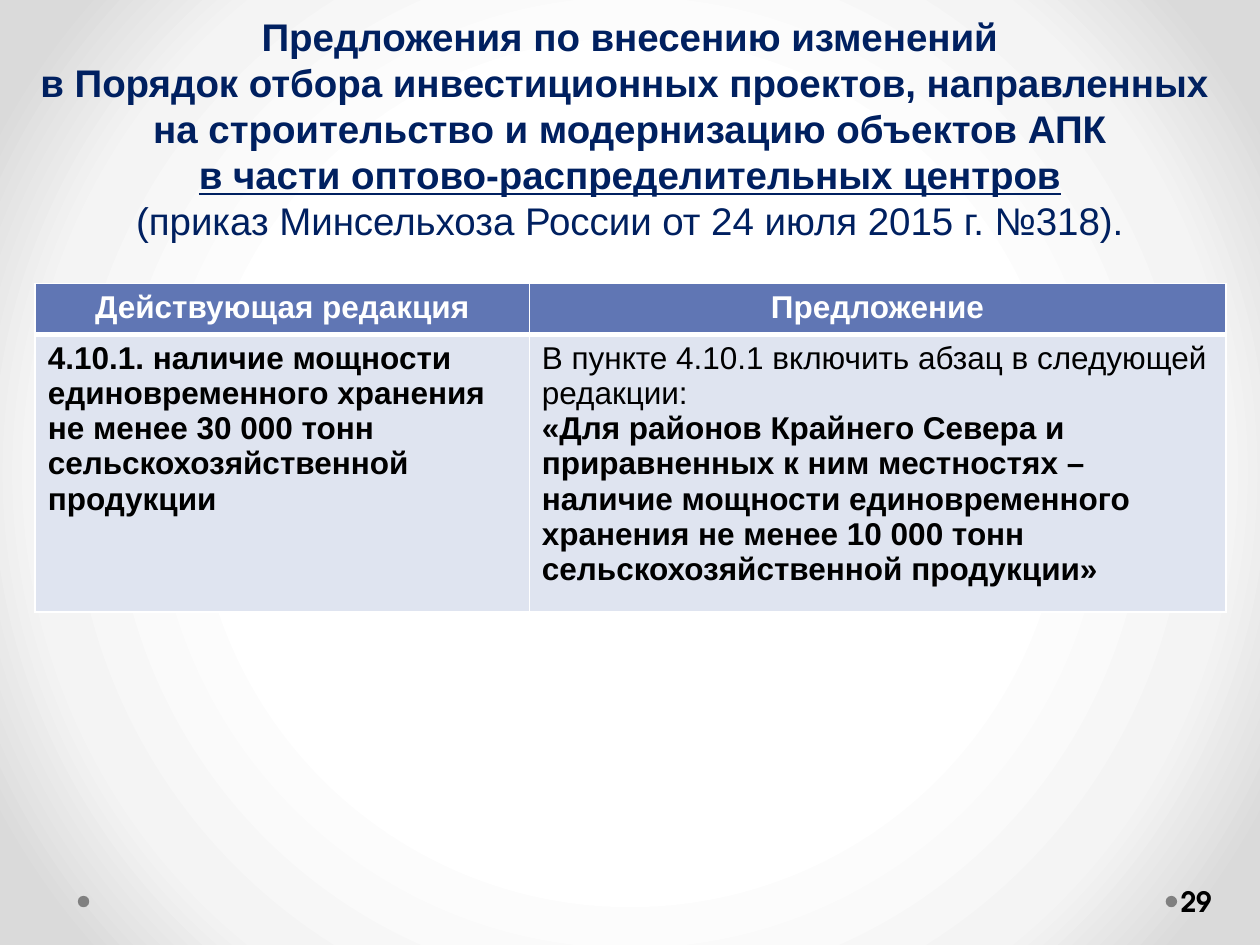
from pptx import Presentation
from pptx.dml.color import RGBColor
from pptx.enum.shapes import MSO_SHAPE
from pptx.enum.text import MSO_ANCHOR, PP_ALIGN
from pptx.oxml import parse_xml
from pptx.oxml.ns import nsdecls
from pptx.util import Cm, Pt

OVAL = MSO_SHAPE.OVAL
MIDDLE = MSO_ANCHOR.MIDDLE
LEFT, CENTER = PP_ALIGN.LEFT, PP_ALIGN.CENTER

COLORS = {
    "white": "FFFFFF", "pale": "F4F4F4", "edge": "DADADA", "dot": "808080",
    "navy": "002060", "head": "6076B4", "body": "DFE4F0", "black": "000000",
}


def color(name):
    return RGBColor.from_string(COLORS[name])


def write(frame, lines, size, tint, align, face="Arial"):
    """Fill a text frame with one paragraph per (text, bold, underline)."""
    for i, (text, bold, under) in enumerate(lines):
        para = frame.paragraphs[0] if i == 0 else frame.add_paragraph()
        para.alignment = align
        run = para.add_run()
        run.text = text
        font = run.font
        font.name, font.size = face, Pt(size)
        font.bold, font.underline = bold, under
        font.color.rgb = color(tint)


deck = Presentation()
deck.slide_width, deck.slide_height = Cm(25.4), Cm(19.05)
slide = deck.slides.add_slide(deck.slide_layouts[6])
shapes = slide.shapes

# Background: radial gradient
stops = "".join(
    f'<a:gs pos="{pos * 1000}"><a:srgbClr val="{COLORS[name]}"/></a:gs>'
    for pos, name in ((50, "white"), (76, "pale"), (92, "edge")))
slide.element.cSld.insert(0, parse_xml(
    f'<p:bg {nsdecls("p", "a")}><p:bgPr><a:gradFill rotWithShape="1">'
    f'<a:gsLst>{stops}</a:gsLst><a:path path="circle">'
    '<a:fillToRect l="50000" t="50000" r="50000" b="50000"/></a:path>'
    '</a:gradFill><a:effectLst/></p:bgPr></p:bg>'))

# Footer dots and page number
for left in (23.5, 1.57):
    dot = shapes.add_shape(OVAL, Cm(left), Cm(18.06), Cm(0.23), Cm(0.23))
    dot.shadow.inherit = False
    dot.fill.solid()
    dot.fill.fore_color.rgb = color("dot")
    dot.line.fill.background()

page = shapes.add_textbox(Cm(23.72), Cm(17.65), Cm(1.55), Cm(1.02)).text_frame
page.word_wrap = True
page.vertical_anchor = MIDDLE
page.margin_left, page.margin_right = Cm(0.08), Cm(0.13)
write(page, [("29", True, False)], 16, "black", LEFT, "TeX Gyre Adventor")

# Title
title = shapes.add_textbox(0, Cm(0.13), Cm(25.4), Cm(4.95)).text_frame
title.word_wrap = True
write(title, [
    ("Предложения по внесению изменений", True, False),
    ("в Порядок отбора инвестиционных проектов, направленных ", True, False),
    ("на строительство и модернизацию объектов АПК", True, False),
    ("в части оптово-распределительных центров", True, True),
    ("(приказ Минсельхоза России от 24 июля 2015 г. №318).", False, False),
], 22, "navy", CENTER)

# Table of current and proposed wording
rows = [
    [[("Действующая редакция", True, False)],
     [("Предложение", True, False)]],
    [[("4.10.1. наличие мощности единовременного хранения не менее "
       "30 000 тонн сельскохозяйственной продукции", True, False)],
     [("В пункте 4.10.1 включить абзац в следующей редакции:", False, False),
      ("«Для районов Крайнего Севера и приравненных к ним местностях – "
       "наличие мощности единовременного хранения не менее 10 000 тонн "
       "сельскохозяйственной продукции»", True, False)]],
]
styles = [("head", "white", CENTER, {"B": 3}), ("body", "black", LEFT, {"T": 3})]
table = shapes.add_table(2, 2, Cm(0.71), Cm(5.72), Cm(24), Cm(6.6)).table
for col, width in zip(table.columns, (9.96, 14.04)):
    col.width = Cm(width)
for row, height in zip(table.rows, (1, 5.6)):
    row.height = Cm(height)

for r, (row, (fill, tint, align, thick)) in enumerate(zip(rows, styles)):
    for c, lines in enumerate(row):
        cell = table.cell(r, c)
        write(cell.text_frame, lines, 18, tint, align)
        cell.fill.solid()
        cell.fill.fore_color.rgb = color(fill)
        props = cell._tc.get_or_add_tcPr()
        for i, side in enumerate("LRTB"):
            props.insert(i, parse_xml(
                f'<a:ln{side} {nsdecls("a")} w="{Pt(thick.get(side, 1))}">'
                f'<a:solidFill><a:srgbClr val="{COLORS["white"]}"/>'
                f'</a:solidFill></a:ln{side}>'))

deck.save("out.pptx")
